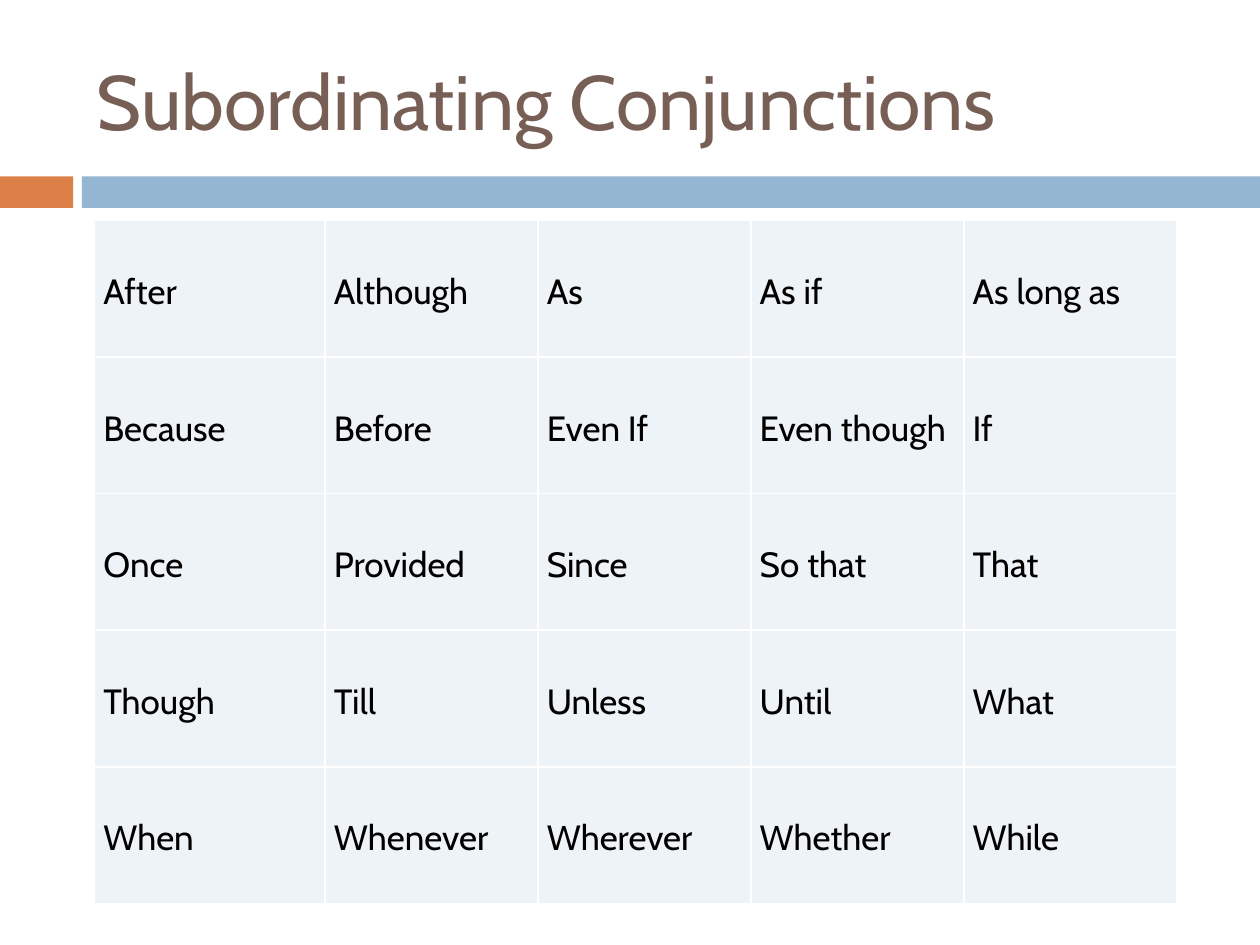
from lxml import etree
from pptx import Presentation
from pptx.dml.color import RGBColor
from pptx.enum.shapes import MSO_SHAPE
from pptx.enum.text import MSO_ANCHOR
from pptx.oxml.ns import qn
from pptx.util import Inches, Pt

RECTANGLE = MSO_SHAPE.RECTANGLE
MIDDLE = MSO_ANCHOR.MIDDLE

FONT = "Cabin"
ORANGE = "DD8047"
BLUE = "94B6D2"
BROWN = "775F55"
CELL_FILL = "EEF3F7"
WHITE = "FFFFFF"
BLACK = "000000"

CONJUNCTIONS = [
    ["After", "Although", "As", "As if", "As long as"],
    ["Because", "Before", "Even If", "Even though", "If"],
    ["Once", "Provided", "Since", "So that", "That"],
    ["Though", "Till", "Unless", "Until", "What"],
    ["When", "Whenever", "Wherever", "Whether", "While"],
]
FIRST_COLUMN_WIDTH = 1.83
COLUMN_WIDTH = 1.69
TABLE_HEIGHT = 5.42


def color(hex_string):
    return RGBColor.from_string(hex_string)


def format_text(para, size, hex_string):
    for span in para.runs:
        span.font.name = FONT
        span.font.size = Pt(size)
        span.font.color.rgb = color(hex_string)


def add_bar(page, left, width, hex_string):
    bar = page.shapes.add_shape(
        RECTANGLE, Inches(left), Inches(1.4), Inches(width), Inches(0.25))
    bar.shadow.inherit = False
    bar.fill.solid()
    bar.fill.fore_color.rgb = color(hex_string)
    bar.line.fill.background()


def add_title(page, text):
    box = page.shapes.add_textbox(
        Inches(0.67), Inches(0.25), Inches(8.92), Inches(1.08))
    frame = box.text_frame
    frame.word_wrap = True
    frame.vertical_anchor = MIDDLE
    frame.text = text
    format_text(frame.paragraphs[0], 44, BROWN)


def add_borders(cell, hex_string, width):
    """Line all four sides; call before the fill, which must follow in the XML."""
    properties = cell._tc.get_or_add_tcPr()
    for side in ("a:lnL", "a:lnR", "a:lnT", "a:lnB"):
        line = etree.SubElement(properties, qn(side), w=str(Pt(width)))
        fill = etree.SubElement(line, qn("a:solidFill"))
        etree.SubElement(fill, qn("a:srgbClr"), val=hex_string)


def fill_cell(cell, text):
    add_borders(cell, WHITE, 1)
    cell.fill.solid()
    cell.fill.fore_color.rgb = color(CELL_FILL)
    cell.vertical_anchor = MIDDLE
    cell.margin_left = cell.margin_right = Inches(0.07)
    cell.margin_top = cell.margin_bottom = 0
    cell.text_frame.text = text
    para = cell.text_frame.paragraphs[0]
    para.line_spacing = 1.15
    format_text(para, 20, BLACK)


def add_word_table(page, rows):
    column_count = len(rows[0])
    widths = [FIRST_COLUMN_WIDTH] + [COLUMN_WIDTH] * (column_count - 1)
    table = page.shapes.add_table(
        len(rows), column_count, Inches(0.75), Inches(1.75),
        Inches(sum(widths)), Inches(TABLE_HEIGHT)).table
    table.first_row = False
    table.horz_banding = False
    for column, width in zip(table.columns, widths):
        column.width = Inches(width)
    for row, words in zip(table.rows, rows):
        for cell, word in zip(row.cells, words):
            fill_cell(cell, word)


def main():
    deck = Presentation()
    deck.slide_width = Inches(10)
    deck.slide_height = Inches(7.5)
    page = deck.slides.add_slide(deck.slide_layouts[6])
    add_bar(page, 0, 0.58, ORANGE)
    add_bar(page, 0.65, 9.35, BLUE)
    add_title(page, "Subordinating Conjunctions")
    add_word_table(page, CONJUNCTIONS)
    deck.save("out.pptx")


if __name__ == "__main__":
    main()
